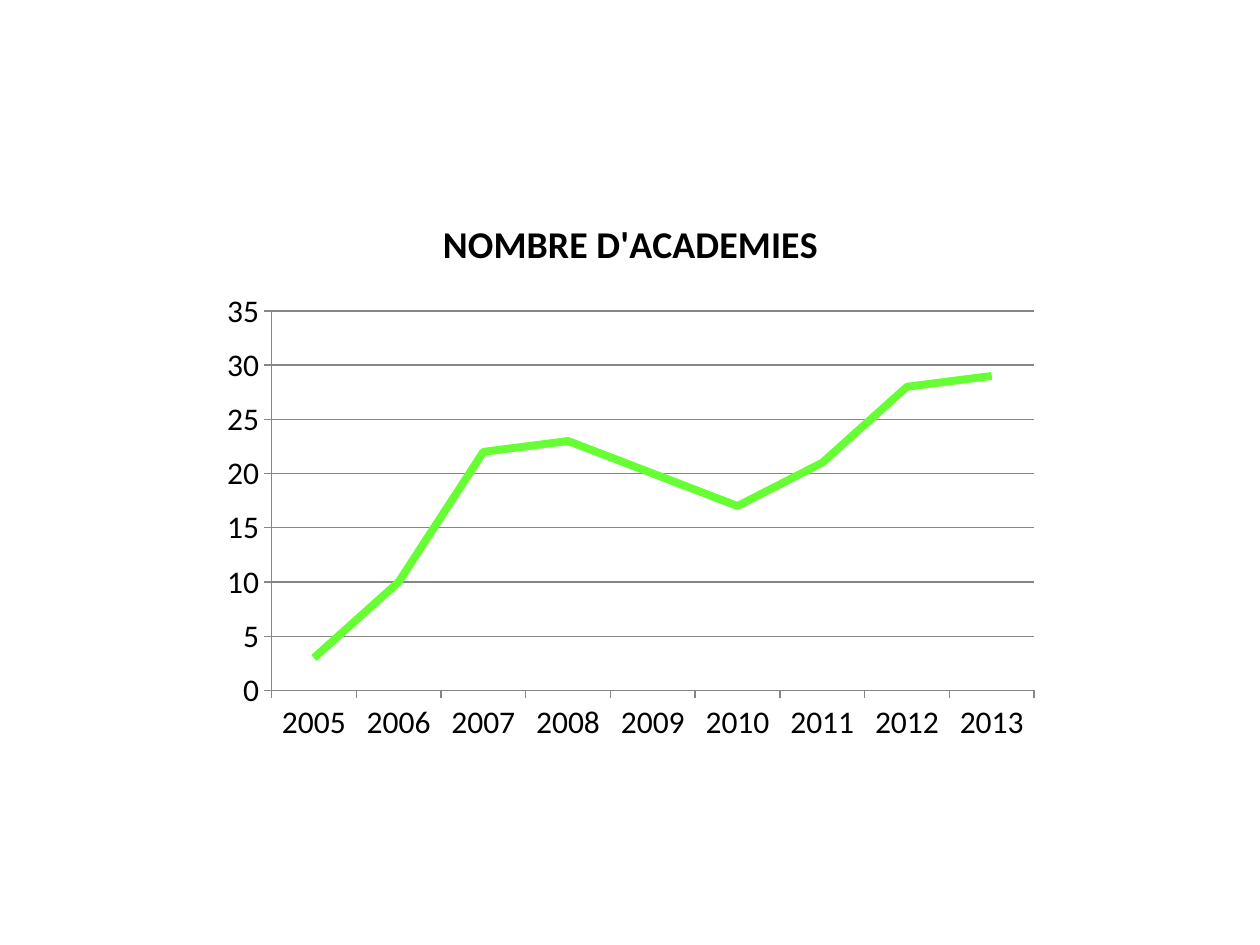
from pptx import Presentation
from pptx.chart.data import CategoryChartData
from pptx.dml.color import RGBColor
from pptx.enum.chart import XL_CHART_TYPE, XL_MARKER_STYLE, XL_TICK_MARK
from pptx.util import Inches, Pt

COLORS = {"text": "000000", "line": "66FF33", "axis": "868686"}
FONT = "Calibri"
TITLE = "NOMBRE D'ACADEMIES"
YEARS = range(2005, 2014)
ACADEMIES = (3, 10, 22, 23, 20, 17, 21, 28, 29)


def style_font(font, size, bold=False):
    """Apply the chart's typeface and text colour."""
    font.name, font.size, font.bold = FONT, Pt(size), bold
    font.color.rgb = RGBColor.from_string(COLORS["text"])


def style_line(line, color, width):
    """Set a line's colour and width in points."""
    line.color.rgb = RGBColor.from_string(COLORS[color])
    line.width = Pt(width)


def add_academies_chart(slide, left, top, width, height):
    """Draw the yearly number of academies in the given box."""
    data = CategoryChartData()
    data.categories = [str(year) for year in YEARS]
    data.add_series(TITLE, ACADEMIES)
    chart = slide.shapes.add_chart(
        XL_CHART_TYPE.LINE_STACKED, left, top, width, height, data
    ).chart
    style_font(chart.font, 18)
    chart.has_legend = False

    chart.has_title = True
    tf = chart.chart_title.text_frame
    tf.text = TITLE
    style_font(tf.paragraphs[0].runs[0].font, 21.6, bold=True)
    chart.chart_title.include_in_layout = False

    for axis in (chart.category_axis, chart.value_axis):
        axis.major_tick_mark = XL_TICK_MARK.OUTSIDE
        axis.minor_tick_mark = XL_TICK_MARK.NONE
        style_line(axis.format.line, "axis", 0.75)
    axis = chart.value_axis
    axis.minimum_scale, axis.maximum_scale, axis.major_unit = 0, 35, 5
    axis.has_major_gridlines = True
    style_line(axis.major_gridlines.format.line, "axis", 0.75)

    plot = chart.plots[0]
    plot.vary_by_categories = False
    series = plot.series[0]
    series.smooth = False
    series.marker.style = XL_MARKER_STYLE.NONE
    style_line(series.format.line, "line", 4.5)


def main():
    """Build and save the slide."""
    prs = Presentation()
    prs.slide_width, prs.slide_height = Inches(10), Inches(7.5)
    slide = prs.slides.add_slide(prs.slide_layouts[6])
    add_academies_chart(slide, Inches(1.67), Inches(1.53), Inches(6.67), Inches(4.44))
    prs.save("out.pptx")


if __name__ == "__main__":
    main()
